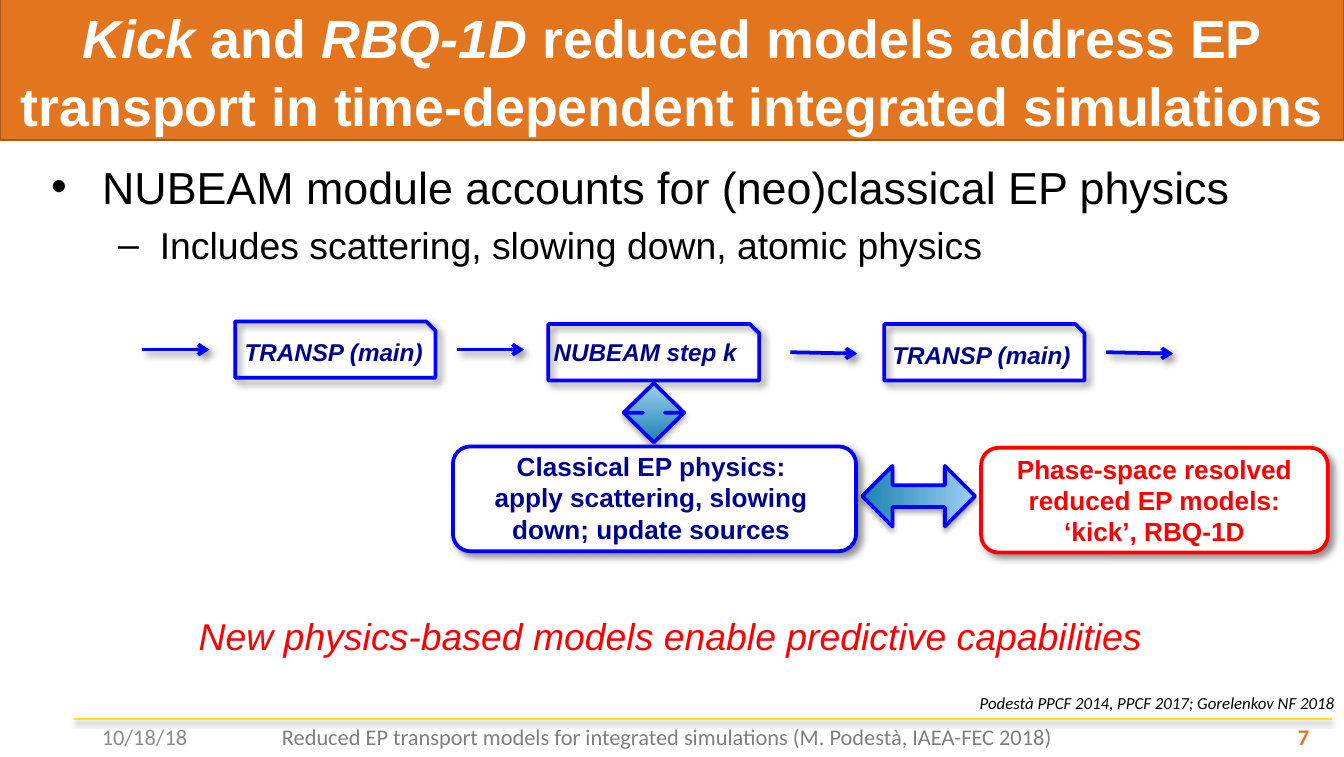
"""Build the slide on reduced EP transport models in integrated simulations."""
import lxml.etree
import pptx
import pptx.dml.color
import pptx.enum.shapes
import pptx.enum.text
import pptx.oxml.ns
import pptx.util

RGB = pptx.dml.color.RGBColor
WHITE, BLACK, RED = RGB(255, 255, 255), RGB(0, 0, 0), RGB(255, 0, 0)
BLUE, NAVY = RGB(0, 0, 255), RGB(0, 0, 0x90)
ORANGE, BROWN, GOLD = RGB(0xE2, 0x75, 0x1D), RGB(0xAA, 0x58, 0x16), RGB(0xFF, 0xE4, 0x06)
GREY, SILVER = RGB(0x7F, 0x7F, 0x7F), RGB(0x8C, 0x8C, 0x8C)
TEAL, SKY = RGB(0x1B, 0x83, 0xB0), RGB(0xA0, 0xCF, 0xF4)
PX = 9144
FORM = pptx.enum.shapes.MSO_SHAPE
STRAIGHT = pptx.enum.shapes.MSO_CONNECTOR.STRAIGHT
LEFT, MID, RIGHT, FULL = (pptx.enum.text.PP_ALIGN[n] for n in ("LEFT", "CENTER", "RIGHT", "JUSTIFY"))
TOP, CENTRE = pptx.enum.text.MSO_ANCHOR.TOP, pptx.enum.text.MSO_ANCHOR.MIDDLE
SOFT, DROP, FLAT = (35, 3.1, 1.8, 90), (43, 4, 3, 45), (38, 3.1, 1.6, 90)
qn = pptx.oxml.ns.qn
sub = lxml.etree.SubElement


def edge(item, color, width, shade):
    item.line.color.rgb = color
    item.line.width = pptx.util.Pt(width)
    alpha, blur, dist, angle = shade
    effect = sub(item._element.spPr, qn("a:effectLst"))
    outer = sub(effect, qn("a:outerShdw"), blurRad=str(int(blur * 12700)),
                dist=str(int(dist * 12700)), dir=str(angle * 60000), rotWithShape="0")
    tone = sub(outer, qn("a:srgbClr"), val="000000")
    sub(tone, qn("a:alpha"), val=str(alpha * 1000))


def write(at, lines, size, color, align=LEFT, face="Arial", bold=False, slant=False,
          inset=(10, 5, 10, 5), anchor=TOP):
    frame = slide.shapes.add_textbox(*(n * PX for n in at)).text_frame
    frame.word_wrap = True
    frame.vertical_anchor = anchor
    frame.margin_left, frame.margin_top, frame.margin_right, frame.margin_bottom = (
        n * PX for n in inset)
    frame.text = "\n".join(lines)
    for para in frame.paragraphs:
        para.alignment = align
        for run in para.runs:
            font = run.font
            font.name, font.size, font.bold, font.italic = face, pptx.util.Pt(size), bold, slant
            font.color.rgb = color
    return frame


deck = pptx.Presentation()
deck.slide_width, deck.slide_height = 1000 * PX, 563 * PX
slide = deck.slides.add_slide(deck.slide_layouts[6])
shapes = slide.shapes

rule = shapes.add_connector(STRAIGHT, 55 * PX, 535 * PX, 991 * PX, 535 * PX)
edge(rule, GOLD, 1, FLAT)

title = shapes.add_shape(FORM.RECTANGLE, 0, -1 * PX, 1000 * PX, 105 * PX)
title.shadow.inherit = False
title.fill.solid()
title.fill.fore_color.rgb = ORANGE
title.line.color.rgb = BROWN
title.line.width = pptx.util.Pt(1.25)
frame = title.text_frame
frame.margin_left = frame.margin_top = frame.margin_right = frame.margin_bottom = 0
frame.vertical_anchor = CENTRE
para = frame.paragraphs[0]
para.alignment = MID
para.line_spacing = 1.05
for words, slant in (
    ("Kick", True), (" and ", False), ("RBQ-1D", True),
    (" reduced models address EP transport in time-dependent integrated simulations", False),
):
    run = para.add_run()
    run.text = words
    run.font.name, run.font.size = "Arial", pptx.util.Pt(28.8)
    run.font.bold, run.font.italic = True, slant
    run.font.color.rgb = WHITE

WIDE = (30, 10, 30, 5)
body = write((8, 84, 983, 144), ["NUBEAM module accounts for (neo)classical EP physics",
                                 "Includes scattering, slowing down, atomic physics"],
             24, BLACK, inset=WIDE, anchor=CENTRE)
for level, (mark, left, hang, size, align) in enumerate(
        (("•", 38, 38, 24, LEFT), ("–", 81, 31, 20, FULL))):
    para = body.paragraphs[level]
    para.level, para.alignment = level, align
    para.runs[0].font.size = pptx.util.Pt(size)
    if level:
        para.space_before = pptx.util.Pt(5)
    props = para._p.get_or_add_pPr()
    props.set("marL", str(left * PX))
    props.set("indent", str(-hang * PX))
    sub(props, qn("a:buFont"), typeface="Arial")
    sub(props, qn("a:buChar"), char=mark)

for left, top, width, inner, high, words in (
    (175, 239, 149, 182, 246, "TRANSP (main)"),
    (408, 241, 157, 412, 246, "NUBEAM step k"),
    (658, 241, 149, 664, 248, "TRANSP (main)"),
):
    step = shapes.add_shape(FORM.SNIP_1_RECTANGLE, left * PX, top * PX, width * PX, 42 * PX)
    step.fill.background()
    edge(step, BLUE, 2, DROP)
    write((inner, high, 143, 32), [words], 13, NAVY, bold=True, slant=True, inset=(0, 5, 0, 5))

for left, start, end in ((106, 260, 260), (340, 260, 260), (588, 262, 263), (823, 262, 263)):
    flow = shapes.add_connector(STRAIGHT, left * PX, start * PX, (left + 50) * PX, end * PX)
    edge(flow, BLUE, 2, DROP)
    sub(flow.line._get_or_add_ln(), qn("a:tailEnd"), type="arrow")

for left, top, height, turn in ((464, 285, 44, 0), (661, 327, 84, 90)):
    link = shapes.add_shape(FORM.UP_DOWN_ARROW, left * PX, top * PX, 45 * PX, height * PX)
    link.rotation = turn
    link.adjustments[0], link.adjustments[1] = 0.37, 0.36
    link.fill.gradient()
    link.fill.gradient_angle = 90
    for stop, color in zip(link.fill.gradient_stops, (TEAL, SKY)):
        stop.color.rgb = color
    edge(link, BLUE, 2, SOFT)

for at, area, color, ink, lines in (
    ((337, 332, 300, 78), (354, 330, 261, 81), BLUE, NAVY,
     ["Classical EP physics:", "apply scattering, slowing down; update sources"]),
    ((730, 333, 258, 78), (729, 332, 260, 81), RED, RED,
     ["Phase-space resolved reduced EP models:", "‘kick’, RBQ-1D"]),
):
    model = shapes.add_shape(FORM.ROUNDED_RECTANGLE, *(n * PX for n in at))
    model.fill.solid()
    model.fill.fore_color.rgb = WHITE
    edge(model, color, 2, DROP)
    write(area, lines, 14, ink, MID, bold=True)

write((43, 436, 912, 68), ["New physics-based models enable predictive capabilities"],
      20, RED, MID, slant=True, inset=WIDE, anchor=CENTRE)
write((720, 511, 366, 39), ["Podestà PPCF 2014, PPCF 2017; Gorelenkov NF 2018"],
      9, BLACK, face="Calibri", slant=True, inset=(9, 4, 9, 4))
write((66, 533, 199, 30), ["10/18/18"], 12, SILVER, face="Calibri")
write((142, 533, 709, 30),
      ["Reduced EP transport models for integrated simulations (M. Podestà, IAEA-FEC 2018)"],
      12, GREY, MID, face="Calibri")
write((751, 533, 233, 30), ["7"], 12, ORANGE, RIGHT, face="Calibri", bold=True)

deck.save("out.pptx")
